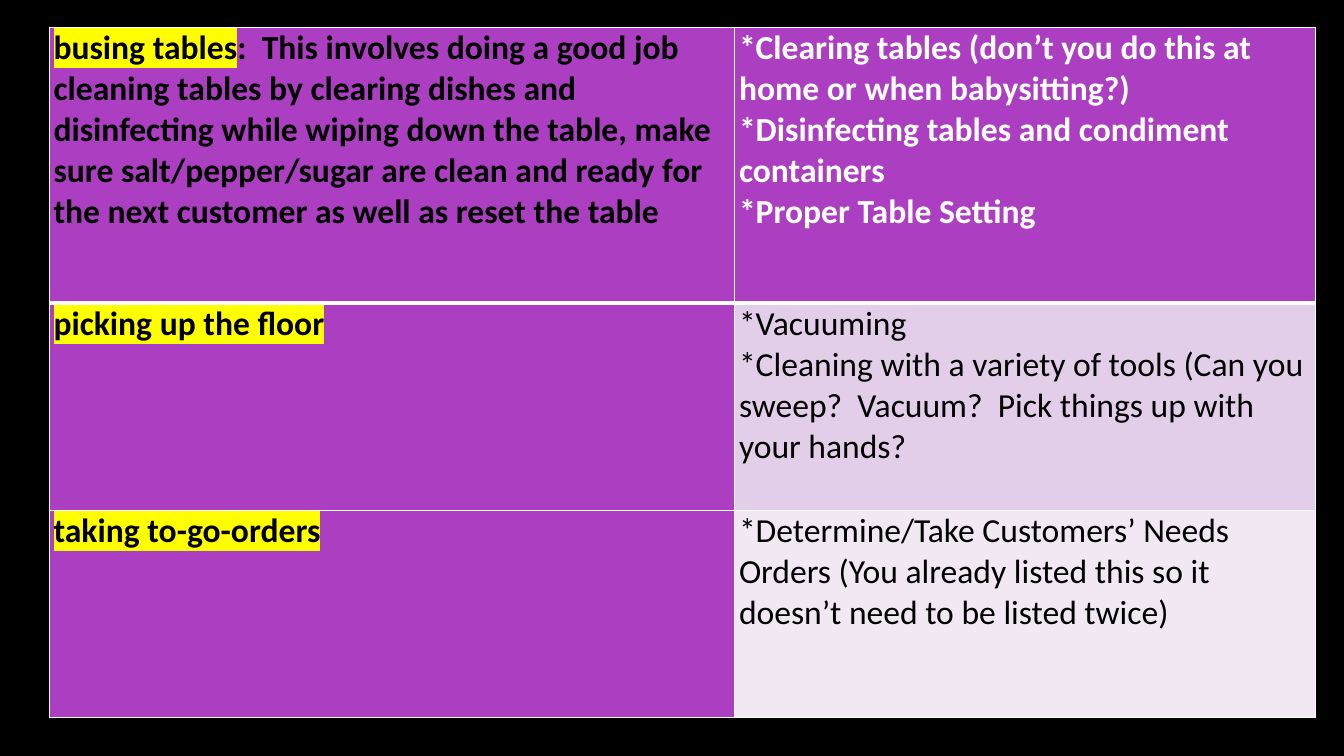
from lxml import etree
from pptx import Presentation
from pptx.dml.color import RGBColor
from pptx.oxml.ns import qn
from pptx.util import Pt

COLORS = {
    "black": "000000",
    "white": "FFFFFF",
    "purple": "AC3EC1",
    "lilac": "E3CEE9",
    "pale": "F1E8F4",
    "yellow": "FFFF00",
}
COLUMNS = [489.6, 414.8]
ROWS = [197.3, 147.8, 147.8]
MARGINS = {"margin_left": Pt(3), "margin_right": Pt(3), "margin_top": 0, "margin_bottom": 0}

DUTIES = [
    ("busing tables",
     ":  This involves doing a good job cleaning tables by clearing dishes and "
     "disinfecting while wiping down the table, make sure salt/pepper/sugar are "
     "clean and ready for the next customer as well as reset the table"),
    ("picking up the floor", ""),
    ("taking to-go-orders", ""),
]
SKILLS = [
    ["*Clearing tables (don’t you do this at home or when babysitting?)",
     "*Disinfecting tables and condiment containers",
     "*Proper Table Setting"],
    ["*Vacuuming",
     "*Cleaning with a variety of tools (Can you sweep?  Vacuum?  "
     "Pick things up with your hands?"],
    ["*Determine/Take Customers’ Needs  Orders (You already listed this so it "
     "doesn’t need to be listed twice)"],
]
SKILL_STYLES = [("purple", "white", True), ("lilac", "black", False), ("pale", "black", False)]


def rgb(name):
    return RGBColor.from_string(COLORS[name])


def add_color(parent, name):
    etree.SubElement(parent, qn("a:srgbClr"), val=COLORS[name])


def add_run(p, content, color, bold, highlight=None):
    r = p.add_run()
    r.text = content
    for key, value in {"name": "Calibri", "size": Pt(24), "bold": bold}.items():
        setattr(r.font, key, value)
    r.font.color.rgb = rgb(color)
    if highlight:
        mark = etree.Element(qn("a:highlight"))
        add_color(mark, highlight)
        r.font._element.find(qn("a:solidFill")).addnext(mark)


def set_borders(cell, widths):
    tc_pr = cell._tc.get_or_add_tcPr()
    for i, (side, width) in enumerate(widths.items()):
        ln = etree.Element(qn(f"a:ln{side}"), w=str(Pt(width)))
        add_color(etree.SubElement(ln, qn("a:solidFill")), "white")
        tc_pr.insert(i, ln)


def format_cell(cell, fill, row):
    for key, value in MARGINS.items():
        setattr(cell, key, value)
    cell.fill.solid()
    cell.fill.fore_color.rgb = rgb(fill)
    set_borders(cell, {"L": 1, "R": 1, "T": 3 if row == 1 else 1, "B": 3 if row == 0 else 1})


def fill_duty(cell, row):
    term, details = DUTIES[row]
    format_cell(cell, "purple", row)
    p = cell.text_frame.paragraphs[0]
    add_run(p, term, "black", True, "yellow")
    if details:
        add_run(p, details, "black", True)


def fill_skills(cell, row):
    fill, color, bold = SKILL_STYLES[row]
    format_cell(cell, fill, row)
    tf = cell.text_frame
    for i, line in enumerate(SKILLS[row]):
        p = tf.add_paragraph() if i else tf.paragraphs[0]
        add_run(p, line, color, bold)


def add_duties_table(slide):
    table = slide.shapes.add_table(len(ROWS), len(COLUMNS), Pt(35.3), Pt(19.4),
                                   Pt(sum(COLUMNS)), Pt(sum(ROWS))).table
    for column, width in zip(table.columns, COLUMNS):
        column.width = Pt(width)
    for i, height in enumerate(ROWS):
        table.rows[i].height = Pt(height)
        fill_duty(table.cell(i, 0), i)
        fill_skills(table.cell(i, 1), i)


def main():
    prs = Presentation()
    prs.slide_width, prs.slide_height = Pt(960), Pt(540)
    slide = prs.slides.add_slide(prs.slide_layouts[6])
    slide.background.fill.solid()
    slide.background.fill.fore_color.rgb = rgb("black")
    add_duties_table(slide)
    prs.save("out.pptx")


if __name__ == "__main__":
    main()
